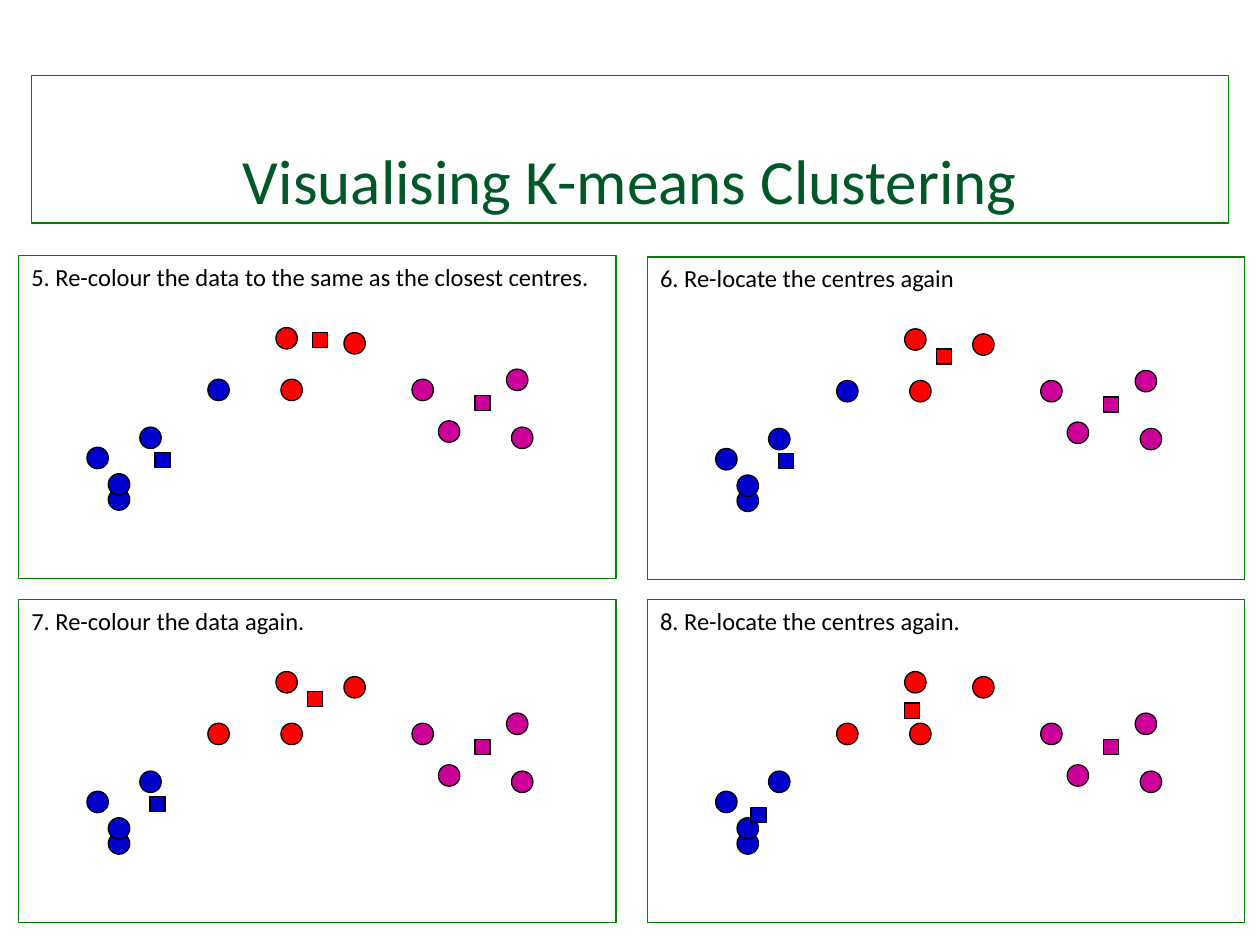
from dataclasses import dataclass

from pptx import Presentation
from pptx.dml.color import RGBColor as RGB
from pptx.enum.shapes import MSO_SHAPE as Shape
from pptx.enum.text import MSO_ANCHOR as Anchor, PP_ALIGN as Align
from pptx.util import Inches, Pt


@dataclass(frozen=True)
class Theme:
    font: str = "Calibri"
    title_size: int = 36
    caption_size: int = 14
    line_width: float = 0.75
    title: RGB = RGB(0x00, 0x58, 0x28)
    text: RGB = RGB(0, 0, 0)
    frame: RGB = RGB(0x00, 0x82, 0x00)
    outline: RGB = RGB(0, 0, 0)
    blue: RGB = RGB(0x00, 0x00, 0xCC)
    red: RGB = RGB(0xFF, 0x00, 0x00)
    purple: RGB = RGB(0xCC, 0x00, 0x99)


THEME = Theme()
TITLE = "Visualising K-means Clustering"
TITLE_BOX = (0.25, 0.6, 9.5, 1.17)

# Places inside a panel are measured from its top left corner.
PANEL_SIZE = (4.74, 2.56)
CAPTION_HEIGHT = 0.34
POINT_SIZE = 0.17
CENTRE_SIZE = 0.12
POINTS = [
    (0.71, 1.85), (0.54, 1.52), (0.96, 1.36), (3.87, 0.90),
    (2.04, 0.57), (2.58, 0.61), (2.08, 0.98), (1.50, 0.98),
    (3.91, 1.36), (3.12, 0.98), (0.71, 1.73), (3.33, 1.31),
]
CLUSTERS = (THEME.blue, THEME.red, THEME.purple)
# One digit per point: its index in CLUSTERS.
BEFORE = "000211102202"
AFTER = "000211112202"

STEPS = [
    {"caption": "5. Re-colour the data to the same as the closest centres.",
     "corner": (0.15, 2.03), "clusters": BEFORE,
     "centres": [(1.08, 1.56), (2.33, 0.61), (3.62, 1.11)]},
    {"caption": "6. Re-locate the centres again",
     "corner": (5.14, 2.04), "clusters": BEFORE,
     "centres": [(1.04, 1.56), (2.29, 0.73), (3.62, 1.11)]},
    {"caption": "7. Re-colour the data again.",
     "corner": (0.15, 4.76), "clusters": AFTER,
     "centres": [(1.04, 1.56), (2.29, 0.73), (3.62, 1.11)]},
    {"caption": "8. Re-locate the centres again.",
     "corner": (5.14, 4.76), "clusters": AFTER,
     "centres": [(0.82, 1.65), (2.04, 0.82), (3.62, 1.11)]},
]


def add_outlined(shapes, kind, box, line, fill=None):
    shape = shapes.add_shape(kind, *map(Inches, box))
    shape.shadow.inherit = False
    shape.line.color.rgb = line
    shape.line.width = Pt(THEME.line_width)
    if fill is None:
        shape.fill.background()
    else:
        shape.fill.solid()
        shape.fill.fore_color.rgb = fill
    return shape


def write(shape, text, size, color, align, anchor):
    frame = shape.text_frame
    frame.word_wrap = True
    frame.vertical_anchor = anchor
    para = frame.paragraphs[0]
    para.alignment = align
    span = para.add_run()
    span.text = text
    span.font.name = THEME.font
    span.font.size = Pt(size)
    span.font.color.rgb = color


def add_step(page, step):
    left, top = step["corner"]
    panel = page.shapes.add_group_shape().shapes

    def add_mark(kind, place, size, cluster):
        x, y = place
        add_outlined(panel, kind, (left + x, top + y, size, size),
                     THEME.outline, CLUSTERS[cluster])

    for place, cluster in zip(POINTS, step["clusters"]):
        add_mark(Shape.OVAL, place, POINT_SIZE, int(cluster))
    for cluster, place in enumerate(step["centres"]):
        add_mark(Shape.RECTANGLE, place, CENTRE_SIZE, cluster)
    add_outlined(panel, Shape.RECTANGLE, (left, top, *PANEL_SIZE), THEME.frame)

    caption = page.shapes.add_textbox(
        *map(Inches, (left, top, PANEL_SIZE[0], CAPTION_HEIGHT)))
    write(caption, step["caption"], THEME.caption_size, THEME.text,
          Align.LEFT, Anchor.TOP)


def main():
    deck = Presentation()
    deck.slide_width, deck.slide_height = Inches(10), Inches(7.5)
    page = deck.slides.add_slide(deck.slide_layouts[6])

    title = add_outlined(page.shapes, Shape.RECTANGLE, TITLE_BOX, THEME.frame)
    write(title, TITLE, THEME.title_size, THEME.title, Align.CENTER, Anchor.BOTTOM)
    for step in STEPS:
        add_step(page, step)

    deck.save("out.pptx")


if __name__ == "__main__":
    main()
